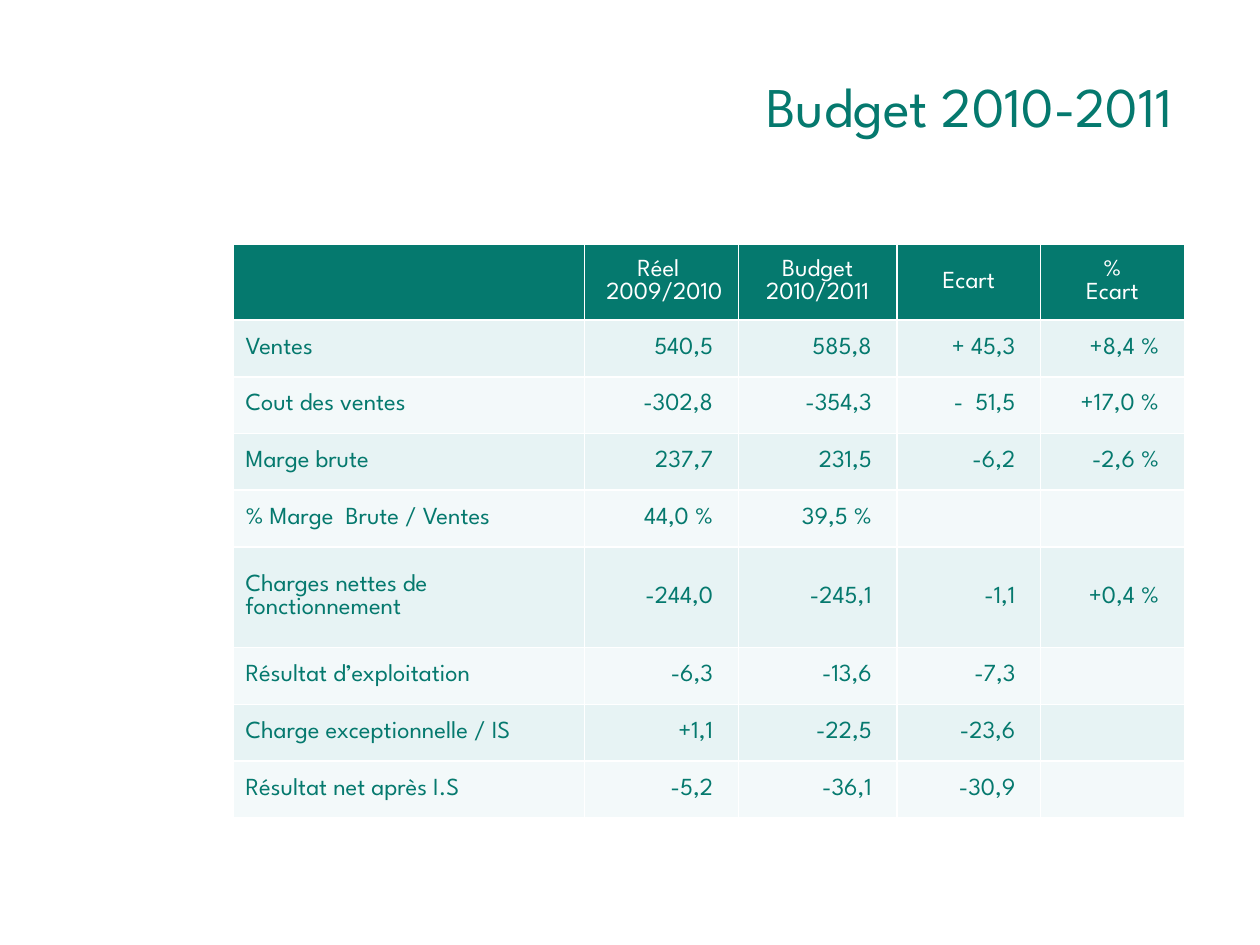
import pptx
import pptx.dml.color
import pptx.enum.text
import pptx.oxml
import pptx.oxml.ns
import pptx.util

Inches = pptx.util.Inches
Pt = pptx.util.Pt
RGBColor = pptx.dml.color.RGBColor
PP_ALIGN = pptx.enum.text.PP_ALIGN
MSO_ANCHOR = pptx.enum.text.MSO_ANCHOR

FONT = "League Spartan"
TEAL = RGBColor(0x05, 0x79, 0x6E)
WHITE = RGBColor(0xFF, 0xFF, 0xFF)
BAND_COLORS = (RGBColor(0xE7, 0xF3, 0xF4), RGBColor(0xF3, 0xF9, 0xFA))

COLUMN_WIDTHS = (2.79, 1.22, 1.26, 1.14, 1.14)
HEADER_HEIGHT = 0.6
ROW_HEIGHT = 0.45
TALL_ROW_HEIGHT = 0.8

HEADERS = ("", "Réel \n 2009/2010", "Budget 2010/2011", "Ecart", "%\nEcart")
BUDGET_ROWS = (
    ("Ventes", "540,5", "585,8", "+ 45,3", "+8,4 %"),
    ("Cout des ventes", "-302,8", "-354,3", "-  51,5", "+17,0 %"),
    ("Marge brute", "237,7", "231,5", "-6,2", "-2,6 %"),
    ("% Marge  Brute / Ventes", "44,0 %", "39,5 %", "", ""),
    ("Charges nettes de fonctionnement", "-244,0", "-245,1", "-1,1", "+0,4 %"),
    ("Résultat d’exploitation", "-6,3", "-13,6", "-7,3", ""),
    ("Charge exceptionnelle / IS", "+1,1", "-22,5", "-23,6", ""),
    ("Résultat net après I.S", "-5,2", "-36,1", "-30,9", ""),
)
TALL_ROW = 5


def write_text(text_frame, text, size, color, alignment):
    """Write one paragraph for each line of the text."""
    for index, line in enumerate(text.split("\n")):
        paragraph = text_frame.paragraphs[0] if index == 0 else text_frame.add_paragraph()
        paragraph.alignment = alignment
        run = paragraph.add_run()
        run.text = line
        run.font.name = FONT
        run.font.size = Pt(size)
        run.font.bold = False
        run.font.color.rgb = color


def set_borders(cell, color, width):
    properties = cell._tc.get_or_add_tcPr()
    for position, side in enumerate(("lnL", "lnR", "lnT", "lnB")):
        border = pptx.oxml.parse_xml(
            f'<a:{side} {pptx.oxml.ns.nsdecls("a")} w="{Pt(width)}">'
            f'<a:solidFill><a:srgbClr val="{color}"/></a:solidFill></a:{side}>'
        )
        properties.insert(position, border)


def format_cell(cell, text, fill, color, alignment, margin_right):
    cell.fill.solid()
    cell.fill.fore_color.rgb = fill
    set_borders(cell, WHITE, 1)
    cell.vertical_anchor = MSO_ANCHOR.MIDDLE
    cell.margin_right = Inches(margin_right)
    if text:
        write_text(cell.text_frame, text, 14, color, alignment)


def add_title(slide):
    title = slide.shapes.title
    title.left, title.top = Inches(0), Inches(0.52)
    title.width, title.height = Inches(9.41), Inches(0.63)
    title.text_frame.vertical_anchor = MSO_ANCHOR.MIDDLE
    write_text(title.text_frame, "Budget 2010-2011", 32, TEAL, PP_ALIGN.RIGHT)


def add_budget_table(slide):
    row_heights = [HEADER_HEIGHT] + [ROW_HEIGHT] * len(BUDGET_ROWS)
    row_heights[TALL_ROW] = TALL_ROW_HEIGHT
    table = slide.shapes.add_table(
        len(row_heights), len(COLUMN_WIDTHS), Inches(1.85), Inches(1.94),
        Inches(sum(COLUMN_WIDTHS)), Inches(sum(row_heights)),
    ).table
    for column, width in zip(table.columns, COLUMN_WIDTHS):
        column.width = Inches(width)
    for row, height in zip(table.rows, row_heights):
        row.height = Inches(height)

    # Header row
    for cell, text in zip(table.rows[0].cells, HEADERS):
        format_cell(cell, text, TEAL, WHITE, PP_ALIGN.CENTER, 0.1)

    # Banded rows: label on the left, figures on the right
    for row_index, values in enumerate(BUDGET_ROWS, start=1):
        fill = BAND_COLORS[(row_index - 1) % 2]
        for column_index, text in enumerate(values):
            is_label = column_index == 0
            format_cell(
                table.cell(row_index, column_index), text, fill, TEAL,
                PP_ALIGN.LEFT if is_label else PP_ALIGN.RIGHT,
                0.12 if is_label else 0.2,
            )


def main():
    presentation = pptx.Presentation()
    presentation.slide_width = Inches(10)
    presentation.slide_height = Inches(7.5)
    slide = presentation.slides.add_slide(presentation.slide_layouts[5])
    add_title(slide)
    add_budget_table(slide)
    presentation.save("out.pptx")


if __name__ == "__main__":
    main()
